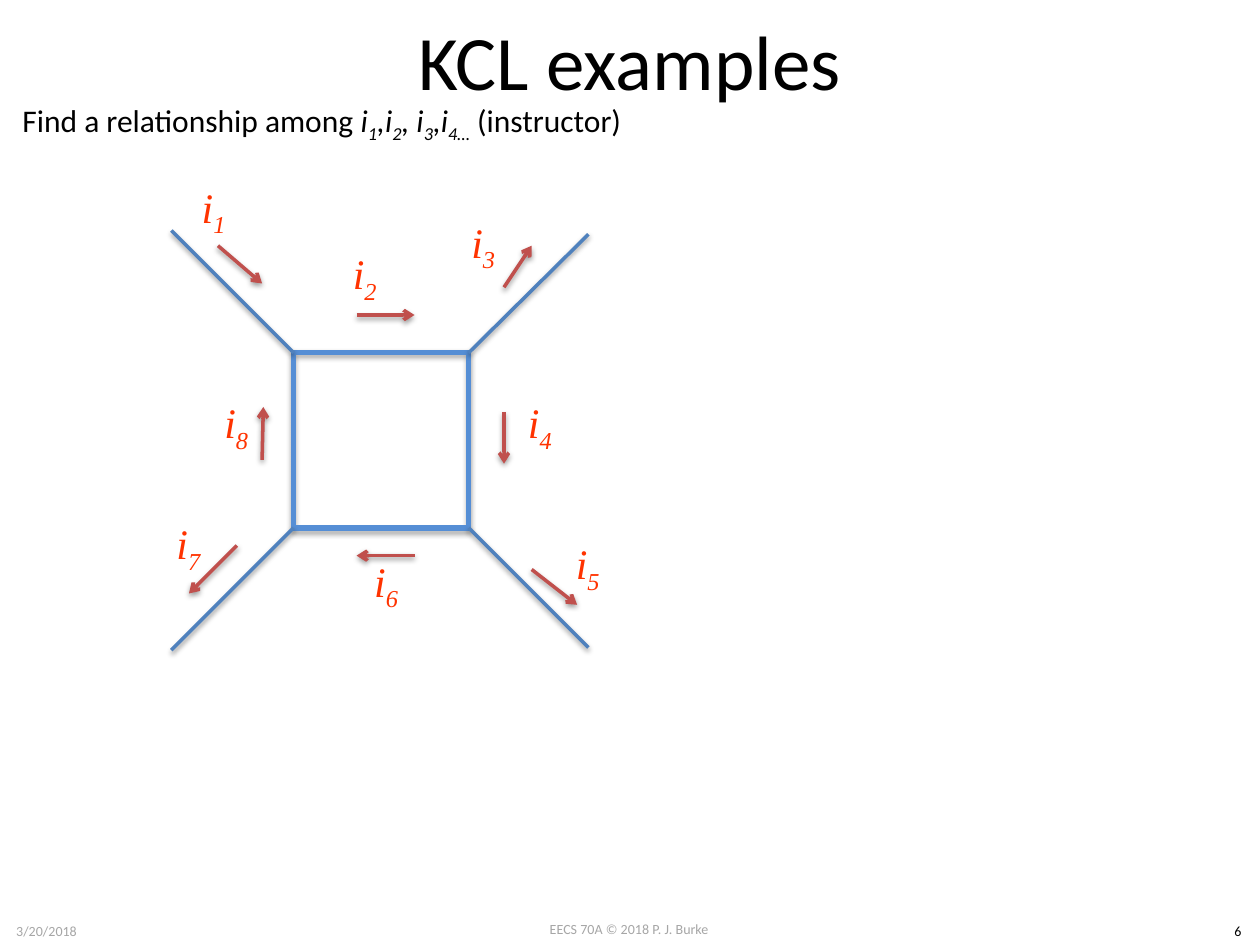
from lxml import etree
from pptx import Presentation
from pptx.dml.color import RGBColor
from pptx.enum import shapes as sh, text as tx
from pptx.oxml import parse_xml
from pptx.oxml.ns import qn
from pptx.util import Inches, Pt

NS = "http://schemas.openxmlformats.org/drawingml/2006/main"
BLACK, GREY, RED, BLUE, EDGE, LABEL = (
    "000000", "A6A6A6", "C0504D", "4F81BD", "558ED5", "FF3300")

TITLE = "KCL examples"
# (text, italic, subscript)
TASK = [
    ("Find a relationship among ", False, False),
    ("i", True, False), ("1", True, True),
    (",i", True, False), ("2", True, True),
    (", i", True, False), ("3", True, True),
    (",i", True, False), ("4…", True, True),
    (" (instructor)", False, False),
]
FOOT = [
    ("EECS 70A © 2018 P. J. Burke", (3.83, 7.26, 2.33, 0.24), GREY),
    ("3/20/2018", (0, 7.27, 0.74, 0.24), GREY),
    ("6", (9.65, 7.27, 0.35, 0.24), BLACK),
]
LEFT, TOP, SIDE = 2.33, 2.8, 1.39
RIGHT, BASE = LEFT + SIDE, TOP + SIDE
WIRES = [
    ((RIGHT, TOP), (4.67, 1.86)),
    ((LEFT, TOP), (1.36, 1.83)),
    ((RIGHT, BASE), (4.67, 5.14)),
    ((LEFT, BASE), (1.36, 5.16)),
]
# subscript: label corner, arrow start, arrow end
CURRENTS = {
    "1": ((1.31, 1.36), (1.73, 1.95), (2.08, 2.25)),
    "2": ((2.51, 1.89), (2.83, 2.5), (3.29, 2.5)),
    "3": ((3.45, 1.64), (4, 2.28), (4.22, 1.95)),
    "4": ((3.9, 3.07), (4, 3.27), (4, 3.68)),
    "5": ((4.28, 4.19), (4.22, 4.52), (4.58, 4.8)),
    "6": ((2.68, 4.33), (3.29, 4.41), (2.83, 4.41)),
    "7": ((1.11, 4.03), (1.88, 4.33), (1.5, 4.71)),
    "8": ((1.49, 3.07), (2.08, 3.65), (2.09, 3.23)),
}


def color(code):
    return RGBColor.from_string(code)


def shade(shape, alpha, dist):
    """Add a soft shadow that falls straight down."""
    shape._element.spPr.append(parse_xml(
        f'<a:effectLst xmlns:a="{NS}"><a:outerShdw blurRad="{Pt(3.1)}" '
        f'dist="{Pt(dist)}" dir="5400000" rotWithShape="0">'
        f'<a:srgbClr val="{BLACK}"><a:alpha val="{alpha * 1000}"/></a:srgbClr>'
        '</a:outerShdw></a:effectLst>'))


def add_line(slide, start, end, code, arrow=False):
    line = slide.shapes.add_connector(
        sh.MSO_CONNECTOR.STRAIGHT, *map(Inches, start + end))
    line.line.color.rgb = color(code)
    line.line.width = Pt(2)
    if arrow:
        etree.SubElement(line.line._get_or_add_ln(), qn("a:tailEnd"), type="arrow")
    shade(line, 38, 1.6)


def add_run(par, words, font, size, code, italic=False, sub=False):
    run = par.add_run()
    run.text = words
    run.font.name, run.font.size = font, Pt(size)
    run.font.color.rgb = color(code)
    run.font.italic = italic
    if sub:
        run.font._element.set("baseline", "-25000")


def add_box(slide, area, align, wrap=True, anchor=tx.MSO_ANCHOR.TOP):
    """Add an empty text box and return its paragraph."""
    frame = slide.shapes.add_textbox(*map(Inches, area)).text_frame
    frame.word_wrap = wrap
    frame.vertical_anchor = anchor
    par = frame.paragraphs[0]
    par.alignment = align
    return par


def main():
    prs = Presentation()
    prs.slide_width, prs.slide_height = Inches(10), Inches(7.5)
    slide = prs.slides.add_slide(prs.slide_layouts[5])
    mid = tx.PP_ALIGN.CENTER

    title = slide.shapes.title
    title.left, title.top, title.width, title.height = map(Inches, (0.5, 0, 9, 0.95))
    title.text_frame.vertical_anchor = tx.MSO_ANCHOR.MIDDLE
    par = title.text_frame.paragraphs[0]
    par.alignment = mid
    add_run(par, TITLE, "Calibri", 44, BLACK)

    for words, area, code in FOOT:
        add_run(add_box(slide, area, mid, wrap=False), words, "Calibri", 8, code)

    par = add_box(slide, (0.08, 0.75, 5.12, 0.4), tx.PP_ALIGN.LEFT, wrap=False)
    for words, italic, sub in TASK:
        add_run(par, words, "Calibri", 18, BLACK, italic, sub)

    loop = slide.shapes.add_shape(
        sh.MSO_SHAPE.RECTANGLE, *map(Inches, (LEFT, TOP, SIDE, SIDE)))
    loop.fill.background()
    loop.line.color.rgb = color(EDGE)
    loop.line.width = Pt(3)
    shade(loop, 35, 1.8)

    for start, end in WIRES:
        add_line(slide, start, end, BLUE)

    for num, (corner, start, end) in CURRENTS.items():
        add_line(slide, start, end, RED, arrow=True)
        par = add_box(slide, corner + (0.77, 0.61), mid, anchor=tx.MSO_ANCHOR.MIDDLE)
        add_run(par, "i", "Times New Roman", 24, LABEL, True)
        add_run(par, num, "Times New Roman", 24, LABEL, True, True)

    prs.save("out.pptx")


if __name__ == "__main__":
    main()
